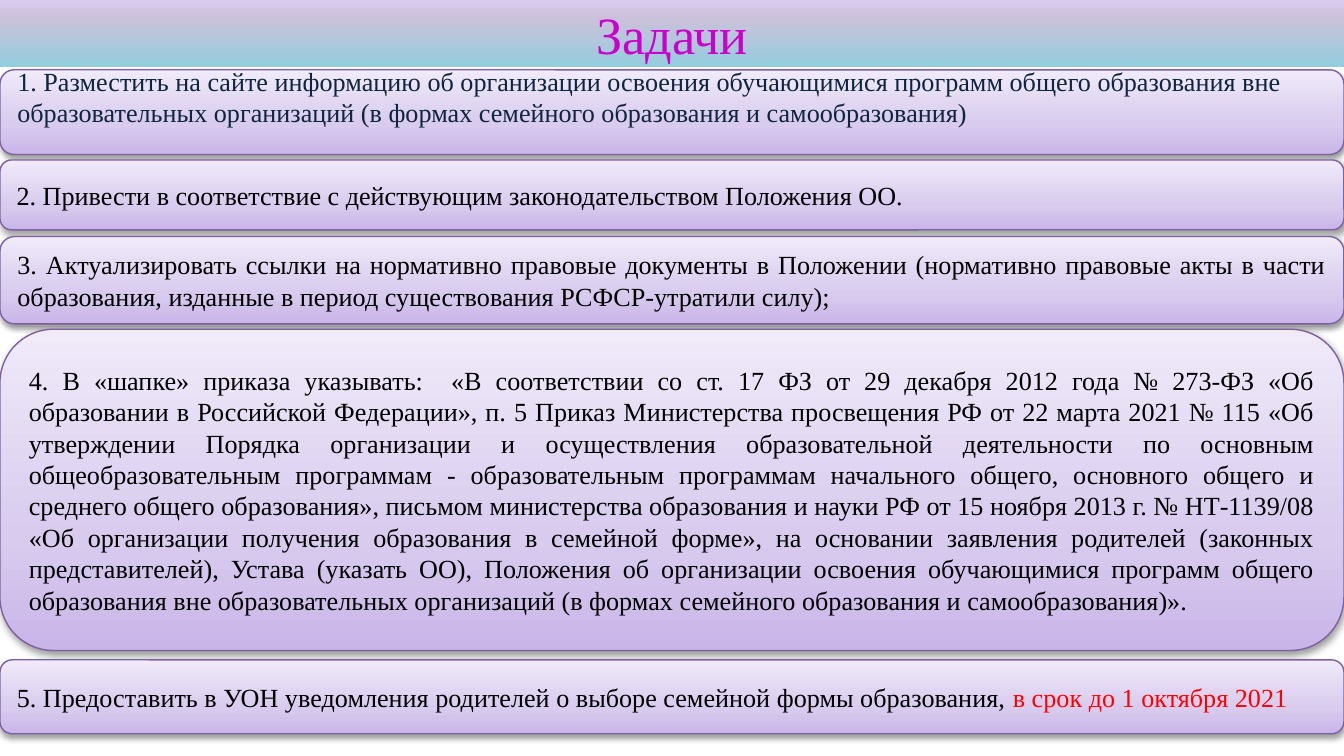
"""Build the slide listing the tasks for family-education paperwork."""
from copy import deepcopy
from dataclasses import dataclass

from lxml import etree
from pptx import Presentation
from pptx.dml.color import RGBColor
from pptx.enum import shapes, text
from pptx.oxml import ns
from pptx.util import Inches, Pt

FONT = "Times New Roman"
NAVY = RGBColor(0x0F, 0x24, 0x3E)
BLACK = RGBColor(0, 0, 0)
RED = RGBColor(0xFF, 0, 0)
MAGENTA = RGBColor(0xCC, 0, 0xCC)
BORDER = RGBColor(0x7D, 0x60, 0xA0)
LILAC = RGBColor(0xD8, 0xCB, 0xEE)
TASK_STOPS = ((0, RGBColor(0xC9, 0xB5, 0xE8)), (0.35, LILAC), (1, RGBColor(0xF0, 0xEA, 0xF9)))
TITLE_STOPS = ((0, RGBColor(0x93, 0xCD, 0xDD)), (0.75, RGBColor(0xCC, 0xC1, 0xDA)), (1, LILAC))
SLIDE_WIDTH = 10
SLIDE_HEIGHT = SLIDE_WIDTH * 9 / 16


@dataclass
class Task:
    top: float
    height: float
    wording: str
    deadline: str = ""
    color: RGBColor = BLACK
    align: text.PP_ALIGN = text.PP_ALIGN.JUSTIFY
    bottom_margin: float = 0.05


TASKS = (
    Task(0.52, 0.63, "1. Разместить на сайте информацию об организации освоения обучающимися "
         "программ общего образования вне образовательных организаций (в формах семейного "
         "образования и самообразования)",
         color=NAVY, align=text.PP_ALIGN.LEFT, bottom_margin=0.28),
    Task(1.19, 0.52, "2. Привести в соответствие с действующим законодательством Положения ОО. "),
    Task(1.76, 0.65, "3. Актуализировать ссылки на нормативно правовые документы в Положении "
         "(нормативно правовые акты в части образования, изданные в период существования "
         "РСФСР-утратили силу);"),
    Task(2.45, 2.39, "4. В «шапке» приказа указывать:  «В соответствии со ст. 17 ФЗ от 29 декабря "
         "2012 года № 273-ФЗ «Об образовании в Российской Федерации», п. 5 Приказ Министерства "
         "просвещения РФ от 22 марта 2021 № 115 «Об утверждении Порядка организации и "
         "осуществления образовательной деятельности по основным общеобразовательным программам "
         "- образовательным программам начального общего, основного общего и среднего общего "
         "образования», письмом министерства образования и науки РФ от 15 ноября 2013 г. "
         "№ НТ-1139/08 «Об организации получения образования в семейной форме», на основании "
         "заявления родителей (законных представителей), Устава (указать ОО), Положения об "
         "организации освоения обучающимися программ общего образования вне образовательных "
         "организаций (в формах семейного образования и самообразования)». "),
    Task(4.91, 0.55, "5. Предоставить в УОН уведомления родителей о выборе семейной формы "
         "образования, ", deadline="в срок до 1 октября 2021"),
)


def fill_gradient(shape, stops: tuple) -> None:
    """Fill a shape with three colours running from bottom to top."""
    shape.fill.gradient()
    stop_list = shape._element.spPr.find(".//" + ns.qn("a:gsLst"))
    stop_list.append(deepcopy(stop_list[-1]))
    for stop, (position, color) in zip(shape.fill.gradient_stops, stops):
        stop.position = position
        stop.color.rgb = color
    shape.fill.gradient_angle = 90


def add_shadow(shape) -> None:
    """Cast a soft shadow below a shape."""
    shape.shadow.inherit = False
    effects = shape._element.spPr.find(ns.qn("a:effectLst"))
    shadow = etree.SubElement(effects, ns.qn("a:outerShdw"), blurRad=str(Pt(3.1)),
                              dist=str(Pt(1.6)), dir="5400000", rotWithShape="0")
    color = etree.SubElement(shadow, ns.qn("a:srgbClr"), val="000000")
    etree.SubElement(color, ns.qn("a:alpha"), val="38000")


def format_run(run, size: float, color: RGBColor) -> None:
    """Set the font of a run."""
    run.font.name = FONT
    run.font.size = Pt(size)
    run.font.color.rgb = color


def place_title(title, wording: str) -> None:
    """Turn the title placeholder into the top band."""
    title.left, title.top = Inches(0), Inches(0)
    title.width, title.height = Inches(SLIDE_WIDTH), Inches(0.5)
    fill_gradient(title, TITLE_STOPS)
    frame = title.text_frame
    frame.text = wording
    frame.auto_size = text.MSO_AUTO_SIZE.NONE
    frame.vertical_anchor = text.MSO_ANCHOR.MIDDLE
    frame.paragraphs[0].alignment = text.PP_ALIGN.CENTER
    format_run(frame.paragraphs[0].runs[0], 28, MAGENTA)


def add_task(slide, task: Task) -> None:
    """Draw one task box."""
    box = slide.shapes.add_shape(shapes.MSO_SHAPE.ROUNDED_RECTANGLE, Inches(0), Inches(task.top),
                                 Inches(SLIDE_WIDTH), Inches(task.height))
    fill_gradient(box, TASK_STOPS)
    box.line.color.rgb = BORDER
    box.line.width = Pt(0.75)
    add_shadow(box)
    frame = box.text_frame
    frame.word_wrap = True
    frame.vertical_anchor = text.MSO_ANCHOR.MIDDLE
    frame.margin_bottom = Inches(task.bottom_margin)
    paragraph = frame.paragraphs[0]
    paragraph.text = task.wording
    paragraph.alignment = task.align
    format_run(paragraph.runs[0], 14, task.color)
    if task.deadline:
        deadline = paragraph.add_run()
        deadline.text = task.deadline
        format_run(deadline, 14, RED)


def main() -> None:
    """Build and save the slide."""
    deck = Presentation()
    deck.slide_width, deck.slide_height = Inches(SLIDE_WIDTH), Inches(SLIDE_HEIGHT)
    slide = deck.slides.add_slide(deck.slide_layouts[5])
    place_title(slide.shapes.title, "Задачи")
    for task in TASKS:
        add_task(slide, task)
    deck.save("out.pptx")


if __name__ == "__main__":
    main()
